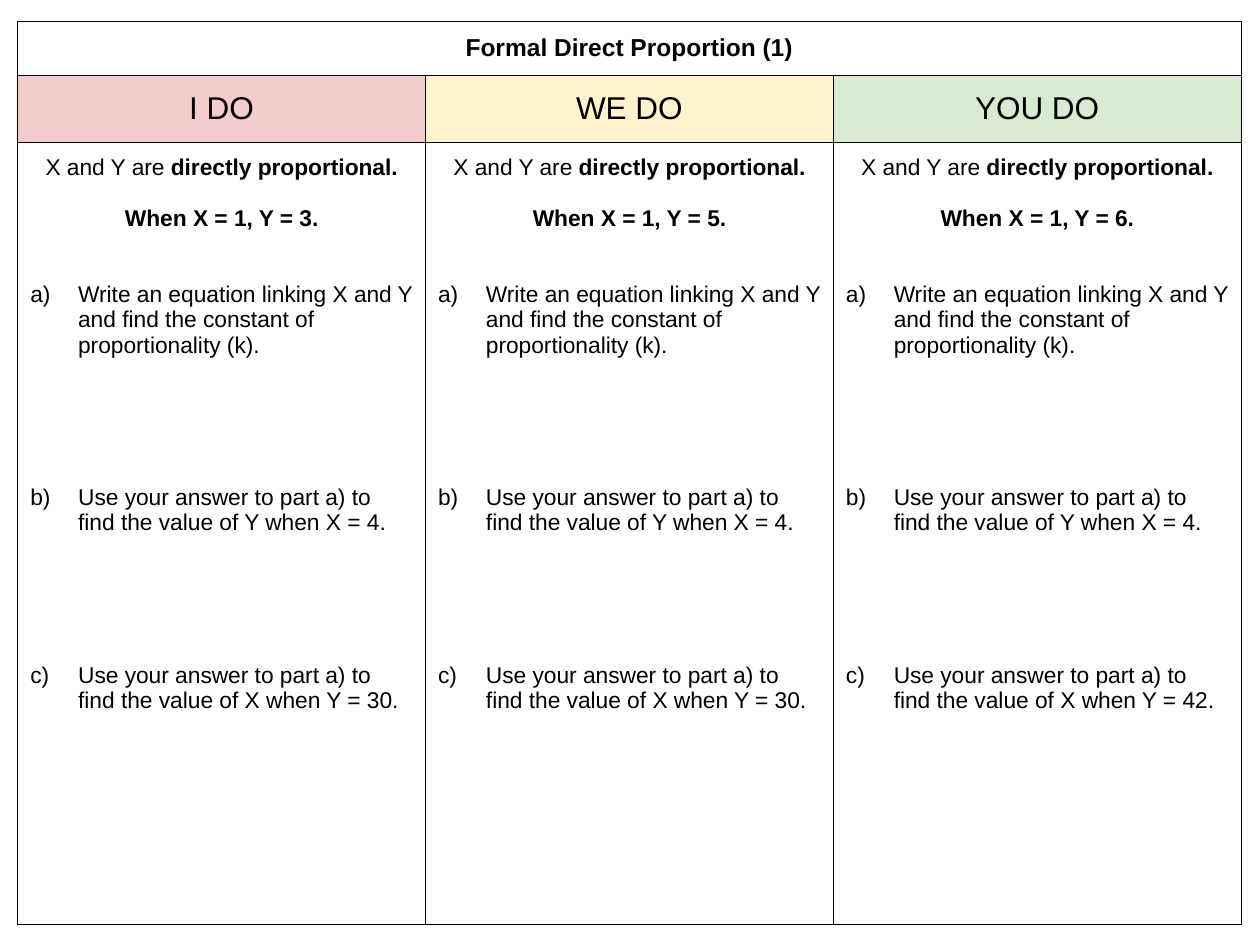
from lxml.etree import SubElement
from pptx import Presentation
from pptx.dml.color import RGBColor
from pptx.enum.text import MSO_ANCHOR, PP_ALIGN
from pptx.oxml.ns import qn
from pptx.util import Inches, Pt

BLACK = RGBColor(0x00, 0x00, 0x00)
PINK = RGBColor(0xF4, 0xCC, 0xCC)
CREAM = RGBColor(0xFF, 0xF2, 0xCC)
GREEN = RGBColor(0xD9, 0xEA, 0xD3)

LINE = 14.5  # height of one 13 pt text line, in points
WORKING_SPACE = 5 * LINE

# Heading, fill, Y when X = 1, Y in part c)
STAGES = [
    ("I DO", PINK, 3, 30),
    ("WE DO", CREAM, 5, 30),
    ("YOU DO", GREEN, 6, 42),
]


def solid(parent, color):
    SubElement(SubElement(parent, qn("a:solidFill")), qn("a:srgbClr"), val=str(color))


class Worksheet:
    font = "Arial"
    margin = Inches(0.1)
    indent = Inches(0.38)
    border = Pt(0.75)

    def __init__(self, prs):
        self.width, self.height = prs.slide_width, prs.slide_height
        self.slide = prs.slides.add_slide(prs.slide_layouts[6])

    def table(self, left, top, width, row_shares, columns):
        """Add a plain table; lengths are shares of the slide's size."""
        heights = [round(share * self.height) for share in row_shares]
        column_width = round(width * self.width / columns)
        table = self.slide.shapes.add_table(
            len(heights), columns, round(left * self.width), round(top * self.height),
            column_width * columns, sum(heights)).table
        table.first_row = table.horz_banding = False
        for column in table.columns:
            column.width = column_width
        for row, height in zip(table.rows, heights):
            row.height = height
        for cell in table.iter_cells():
            self.frame(cell)
        return table

    def frame(self, cell):
        """Give a cell its margins, borders and an empty fill."""
        cell.margin_left = cell.margin_right = self.margin
        cell.margin_top = cell.margin_bottom = self.margin
        for side in ("lnL", "lnR", "lnT", "lnB"):
            ln = SubElement(cell._tc.get_or_add_tcPr(), qn(f"a:{side}"), w=str(self.border))
            solid(ln, BLACK)
        cell.fill.background()

    def style(self, p, size, bold=False):
        for r in p.runs:
            r.font.name, r.font.size, r.font.bold = self.font, Pt(size), bold
            r.font.color.rgb = BLACK

    def heading(self, cell, text, size, bold=False, fill=None):
        cell.text_frame.text = text
        p = cell.text_frame.paragraphs[0]
        p.alignment = PP_ALIGN.CENTER
        self.style(p, size, bold)
        if fill is not None:
            cell.fill.solid()
            cell.fill.fore_color.rgb = fill
            cell.vertical_anchor = MSO_ANCHOR.MIDDLE

    def question(self, p, text, gap):
        """Add a lettered question after a gap in points."""
        p.text = text
        p.alignment = PP_ALIGN.LEFT
        pPr = p._p.get_or_add_pPr()
        pPr.set("marL", str(self.indent))
        pPr.set("indent", str(-self.indent))
        solid_color = SubElement(pPr, qn("a:buClr"))
        SubElement(solid_color, qn("a:srgbClr"), val=str(BLACK))
        SubElement(pPr, qn("a:buFont"), typeface=self.font)
        SubElement(pPr, qn("a:buAutoNum"), type="alphaLcParenR")
        p.space_before = Pt(gap)
        self.style(p, 13)

    def task(self, cell, first_y, last_y):
        tf = cell.text_frame
        # Given facts
        p = tf.paragraphs[0]
        p.text = "X and Y are "
        p.add_run().text = "directly proportional."
        p.alignment = PP_ALIGN.CENTER
        self.style(p, 13)
        p.runs[1].font.bold = True
        p = tf.add_paragraph()
        p.text = f"When X = 1, Y = {first_y}."
        p.alignment = PP_ALIGN.CENTER
        p.space_before = Pt(LINE)
        self.style(p, 13, bold=True)
        # Questions
        for text, gap in (
            ("Write an equation linking X and Y and find the constant of "
             "proportionality (k).", 2 * LINE),
            ("Use your answer to part a) to find the value of Y when X = 4.", WORKING_SPACE),
            (f"Use your answer to part a) to find the value of X when Y = {last_y}.",
             WORKING_SPACE),
        ):
            self.question(tf.add_paragraph(), text, gap)


def main():
    prs = Presentation()
    prs.slide_width, prs.slide_height = Inches(10), Inches(7.5)
    s = Worksheet(prs)
    rows = [inches / 7.5 for inches in (0.43, 0.53, 6.21)]
    table = s.table(0.014, 0.17 / 7.5, 0.971, rows, len(STAGES))

    # Title across all columns
    table.cell(0, 0).merge(table.cell(0, len(STAGES) - 1))
    s.heading(table.cell(0, 0), "Formal Direct Proportion (1)", 14, bold=True)

    # One column for each stage
    for column, (name, fill, first_y, last_y) in enumerate(STAGES):
        s.heading(table.cell(1, column), name, 18, fill=fill)
        s.task(table.cell(2, column), first_y, last_y)

    prs.save("out.pptx")


if __name__ == "__main__":
    main()
